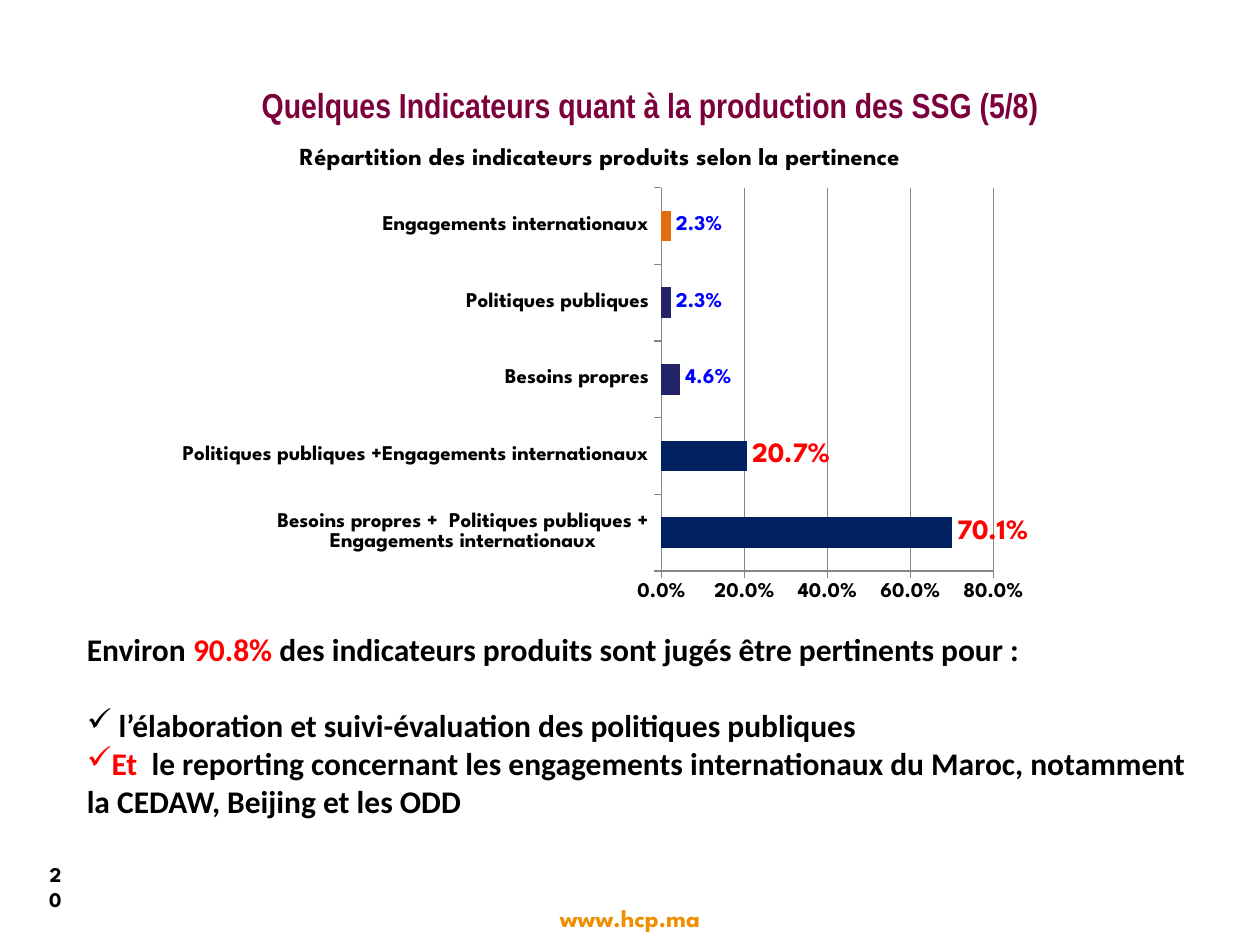
"""Build the slide on the relevance of the indicators produced."""
from lxml.etree import SubElement
from pptx import Presentation
from pptx.chart.data import CategoryChartData
from pptx.dml.color import RGBColor
from pptx.enum.chart import XL_CHART_TYPE, XL_LABEL_POSITION, XL_TICK_MARK
from pptx.enum.shapes import MSO_SHAPE
from pptx.enum.text import MSO_ANCHOR, PP_ALIGN
from pptx.oxml import parse_xml
from pptx.oxml.ns import nsdecls, qn
from pptx.util import Inches, Pt

COLORS = {
    "black": "000000", "red": "FF0000", "blue": "0000FF", "plum": "7B003B",
    "gold": "F18E00", "navy": "002060", "indigo": "222267",
    "orange": "E46C0A", "grey": "868686",
}


def format_font(font, name, size, color):
    values = {"name": name, "size": Pt(size), "bold": True}
    for attribute, value in values.items():
        setattr(font, attribute, value)
    font.color.rgb = RGBColor.from_string(COLORS[color])


def add_runs(paragraph, runs, name, size):
    for text, color in runs:
        run = paragraph.add_run()
        run.text = text
        format_font(run.font, name, size, color)


presentation = Presentation()
presentation.slide_width = Inches(10)
presentation.slide_height = Inches(7.5)
slide = presentation.slides.add_slide(presentation.slide_layouts[6])

labels = [
    ("www.hcp.ma", (3.82, 7.12, 2.36, 0.33), "League Spartan", 14, "gold"),
    ("Quelques Indicateurs quant à la production des SSG (5/8)",
     (0.51, 0.6, 9.3, 0.46), "Arial Narrow", 19.8, "plum"),
]
for text, box, name, size, color in labels:
    shape = slide.shapes.add_textbox(*map(Inches, box))
    shape.text_frame.word_wrap = True
    shape.text_frame.vertical_anchor = MSO_ANCHOR.MIDDLE
    paragraph = shape.text_frame.paragraphs[0]
    paragraph.alignment = PP_ALIGN.CENTER
    add_runs(paragraph, [(text, color)], name, size)

page_number = slide.shapes.add_shape(
    MSO_SHAPE.OVAL, Inches(0.16), Inches(6.79), Inches(0.5), Inches(0.5))
page_number.shadow.inherit = False
page_number.fill.background()
page_number.line.fill.background()
page_number.text_frame.word_wrap = True
page_number.text_frame.vertical_anchor = MSO_ANCHOR.MIDDLE
paragraph = page_number.text_frame.paragraphs[0]
paragraph.alignment = PP_ALIGN.RIGHT
add_runs(paragraph, [("20", "black")], "League Spartan", 12)

indicators = [
    ("Besoins propres +  Politiques publiques + Engagements internationaux", 0.701, "navy"),
    ("Politiques publiques +Engagements internationaux", 0.207, "navy"),
    ("Besoins propres", 0.046, "indigo"),
    ("Politiques publiques", 0.023, "indigo"),
    ("Engagements internationaux", 0.023, "orange"),
]
chart_data = CategoryChartData(number_format="0.0%")
chart_data.categories = [category for category, value, color in indicators]
chart_data.add_series("Series 1", [value for category, value, color in indicators])
chart = slide.shapes.add_chart(
    XL_CHART_TYPE.BAR_CLUSTERED, Inches(1.3), Inches(0.99),
    Inches(6.93), Inches(3.85), chart_data).chart
chart.has_legend = False
format_font(chart.font, "League Spartan", 12, "black")
chart.has_title = True
title_paragraph = chart.chart_title.text_frame.paragraphs[0]
add_runs(title_paragraph,
         [("Répartition des indicateurs produits selon la pertinence", "black")],
         "League Spartan", 14)

value_axis = chart.value_axis
value_format = {"minimum_scale": 0, "maximum_scale": 0.8, "major_unit": 0.2,
                "has_major_gridlines": True}
for attribute, value in value_format.items():
    setattr(value_axis, attribute, value)
value_axis.tick_labels.number_format = "0.0%"
value_axis.tick_labels.number_format_is_linked = False
for axis in (chart.category_axis, value_axis):
    axis.major_tick_mark = XL_TICK_MARK.OUTSIDE
    format_font(axis.tick_labels.font, "League Spartan", 12, "black")
for line in (chart.category_axis.format.line, value_axis.format.line,
             value_axis.major_gridlines.format.line):
    line.color.rgb = RGBColor.from_string(COLORS["grey"])
    line.width = Pt(0.75)

plot = chart.plots[0]
plot.gap_width = 150
plot.vary_by_categories = False
plot.has_data_labels = True
label_format = {"show_value": True, "number_format": "0.0%",
                "number_format_is_linked": False,
                "position": XL_LABEL_POSITION.OUTSIDE_END}
for attribute, value in label_format.items():
    setattr(plot.data_labels, attribute, value)
format_font(plot.data_labels.font, "League Spartan", 12, "blue")
for index, (category, value, color) in enumerate(indicators):
    point = plot.series[0].points[index]
    point.format.fill.solid()
    point.format.fill.fore_color.rgb = RGBColor.from_string(COLORS[color])
    large = value > 0.1
    format_font(point.data_label.font, "League Spartan",
                16 if large else 12, "red" if large else "blue")
    point.data_label.position = XL_LABEL_POSITION.OUTSIDE_END

plot_area = chart.element.find(".//" + qn("c:plotArea"))
for layout in plot_area.findall(qn("c:layout")):
    plot_area.remove(layout)
layout = parse_xml(f"<c:layout {nsdecls('c')}><c:manualLayout/></c:layout>")
layout_values = {"layoutTarget": "inner", "xMode": "edge", "yMode": "edge",
                 "x": "0.57", "y": "0.13", "w": "0.38", "h": "0.79"}
for tag, value in layout_values.items():
    SubElement(layout[0], qn(f"c:{tag}")).set("val", value)
plot_area.insert(0, layout)

conclusions = [
    (False, 0, [("Environ ", "black"), ("90.8% ", "red"),
                ("des indicateurs produits sont jugés être pertinents pour :", "black")]),
    (True, 22, [(" l’élaboration et suivi-évaluation des politiques publiques", "black")]),
    (True, 0, [("Et  ", "red"),
               ("le reporting concernant les engagements internationaux du Maroc, "
                "notamment la CEDAW, Beijing et les ODD", "black")]),
]
conclusion_box = slide.shapes.add_textbox(
    Inches(0.59), Inches(4.94), Inches(8.98), Inches(1.62))
text_frame = conclusion_box.text_frame
text_frame.word_wrap = True
text_frame.vertical_anchor = MSO_ANCHOR.MIDDLE
for index, (bulleted, space, runs) in enumerate(conclusions):
    paragraph = text_frame.add_paragraph() if index else text_frame.paragraphs[0]
    if bulleted:
        properties = paragraph._p.get_or_add_pPr()
        SubElement(properties, qn("a:buChar")).set("char", "✓")
    paragraph.space_before = Pt(space)
    add_runs(paragraph, runs, "Calibri", 18)

presentation.save("out.pptx")
